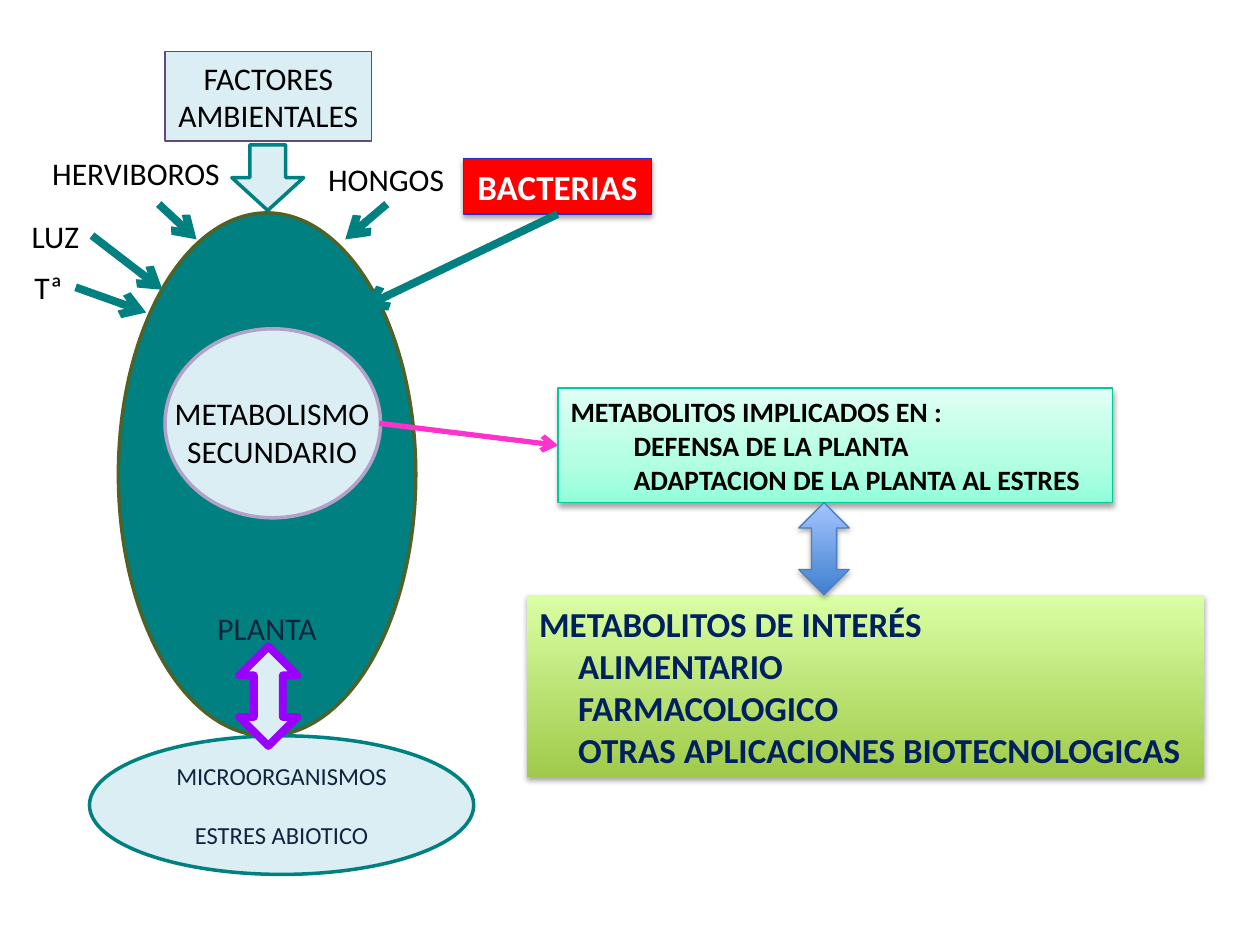
from dataclasses import dataclass

from lxml.etree import SubElement
from pptx import Presentation
from pptx.dml.color import RGBColor
from pptx.enum.shapes import MSO_CONNECTOR as Connector, MSO_SHAPE as Shape
from pptx.enum.text import MSO_ANCHOR as Anchor, MSO_AUTO_SIZE as AutoSize, PP_ALIGN as Align
from pptx.oxml.ns import qn
from pptx.util import Inches, Pt

COLUMNS, ROWS = 100, 75  # square grid cells


@dataclass(frozen=True)
class Theme:
    font: str = "Calibri"
    small: int = 14
    body: int = 16
    label: int = 18
    heading: int = 20
    black: str = "000000"
    white: str = "FFFFFF"
    ink: str = "0F243E"
    navy: str = "002060"
    teal: str = "008080"
    pale: str = "DBEEF4"
    olive: str = "4F6228"
    lilac: str = "B3A2C7"
    plum: str = "604A7B"
    violet: str = "9900FF"
    pink: str = "FF33CC"
    red: str = "FF0000"
    royal: str = "2E2ECB"
    mint_line: str = "00CC98"
    blue_line: str = "4B7EBC"
    mint: tuple = ((0, "90FFDA"), (35, "B2FFE3"), (100, "E0FFF4"))
    green: tuple = ((0, "A0CA4A"), (100, "DAFFA5"))
    blue: tuple = ((0, "3F80CE"), (100, "A4C4FF"))


def write(shape, lines, *, theme, size, color, bold=False, align=Align.CENTER,
          anchor=Anchor.MIDDLE, wrap=False, grow=True, gap=0, indent=0):
    """Write one paragraph per line; gap and indent apply after the first."""
    frame = shape.text_frame
    frame.word_wrap = wrap
    frame.auto_size = AutoSize.SHAPE_TO_FIT_TEXT if grow else AutoSize.NONE
    frame.vertical_anchor = anchor
    for index, line in enumerate(lines):
        paragraph = frame.add_paragraph() if index else frame.paragraphs[0]
        paragraph.alignment = align
        if index:
            paragraph.space_before = Pt(gap)
            properties = paragraph._p.get_or_add_pPr()
            properties.set("marL", str(Inches(indent)))
            properties.set("indent", "0")
        run = paragraph.add_run()
        run.text = line
        run.font.name = theme.font
        run.font.size = Pt(size)
        run.font.bold = bold
        run.font.color.rgb = RGBColor.from_string(color)
    return shape


def fill_gradient(shape, stops):
    """Fill from the bottom edge upwards with (percent, colour) stops."""
    shape.fill.gradient()
    shape.fill.gradient_angle = 90
    stop_list = shape._element.spPr.find(".//" + qn("a:gsLst"))
    for stop in list(stop_list):
        stop_list.remove(stop)
    for percent, color in stops:
        stop = SubElement(stop_list, qn("a:gs"), pos=str(percent * 1000))
        SubElement(stop, qn("a:srgbClr"), val=color)


def add_shadow(shape, opacity=35):
    effects = shape._element.spPr.find(qn("a:effectLst"))
    shadow = SubElement(effects, qn("a:outerShdw"), blurRad=str(Pt(3.1)),
                        dist=str(Pt(1.8)), dir="5400000", rotWithShape="0")
    color = SubElement(shadow, qn("a:srgbClr"), val="000000")
    SubElement(color, qn("a:alpha"), val=str(opacity * 1000))


class Diagram:
    def __init__(self, presentation, theme):
        self.theme = theme
        self.slide = presentation.slides.add_slide(presentation.slide_layouts[6])
        self.column = presentation.slide_width / COLUMNS
        self.row = presentation.slide_height / ROWS

    def place(self, *cells):
        """Turn alternating column and row counts into lengths."""
        return [round(cell * (self.row if index % 2 else self.column))
                for index, cell in enumerate(cells)]

    def shape(self, kind, at, fill, line=None, width=0.75, shadow=False):
        shape = self.slide.shapes.add_shape(kind, *self.place(*at))
        shape.shadow.inherit = False
        if isinstance(fill, tuple):
            fill_gradient(shape, fill)
        else:
            shape.fill.solid()
            shape.fill.fore_color.rgb = RGBColor.from_string(fill)
        if line:
            shape.line.color.rgb = RGBColor.from_string(line)
            shape.line.width = Pt(width)
        else:
            shape.line.fill.background()
        if shadow:
            add_shadow(shape)
        return shape

    def label(self, at, *lines):
        box = self.slide.shapes.add_textbox(*self.place(*at))
        return self.text(box, *lines, anchor=Anchor.TOP)

    def text(self, shape, *lines, **style):
        style = {"size": self.theme.label, "color": self.theme.black} | style
        return write(shape, lines, theme=self.theme, **style)

    def arrow(self, start, end, color, width, source=None, target=None):
        """Draw an arrow; source and target are (shape, side) joints."""
        line = self.slide.shapes.add_connector(Connector.STRAIGHT, *self.place(*start, *end))
        if source:
            line.begin_connect(*source)
        if target:
            line.end_connect(*target)
        line.line.color.rgb = RGBColor.from_string(color)
        line.line.width = Pt(width)
        SubElement(line.line._get_or_add_ln(), qn("a:tailEnd"), type="arrow")
        SubElement(line._element.spPr, qn("a:effectLst"))


def main():
    presentation = Presentation()
    presentation.slide_width, presentation.slide_height = Inches(10), Inches(7.5)
    theme = Theme()
    diagram = Diagram(presentation, theme)

    plant = diagram.shape(Shape.OVAL, (9.4, 16.9, 23.6, 41.5), theme.teal, theme.olive, 2)
    plant.text_frame.margin_bottom = Inches(0.1)
    diagram.text(plant, "PLANTA", color=theme.ink, anchor=Anchor.BOTTOM, grow=False)
    diagram.shape(Shape.OVAL, (13.1, 26.1, 17.1, 15), theme.pale, theme.lilac, 2)
    diagram.label((12.8, 30.8, 17.6, 7.1), "METABOLISMO", "SECUNDARIO")
    soil = diagram.shape(Shape.OVAL, (7.1, 58.4, 30.5, 11), theme.pale, theme.teal, 2)
    diagram.text(soil, "MICROORGANISMOS", "ESTRES ABIOTICO", size=theme.small,
                 color=theme.ink, gap=17, grow=False)
    diagram.shape(Shape.UP_DOWN_ARROW, (19, 51.3, 4.6, 7.9), theme.pale, theme.violet, 4.5)

    factors = diagram.shape(Shape.RECTANGLE, (13.1, 4.1, 16.4, 7.1), theme.pale, theme.plum)
    diagram.text(factors, "FACTORES", "AMBIENTALES")
    diagram.shape(Shape.DOWN_ARROW, (18.4, 11.5, 5.7, 5.2), theme.pale, theme.teal, 2)
    for name, at, start, end in (
        ("HERVIBOROS", (3.1, 11.7, 15.4, 4), (12.6, 16.2), (15.6, 19)),
        ("HONGOS", (25, 12.2, 11.3, 4), (30.7, 16.2), (27.4, 19)),
        ("LUZ", (1.5, 16.7, 5.8, 4), (7.3, 18.7), (12.9, 23)),
        ("Tª", (1.7, 20.8, 4.3, 4), (6, 22.8), (11.6, 24.8)),
    ):
        diagram.label(at, name)
        diagram.arrow(start, end, theme.teal, 4.5)

    bacteria = diagram.shape(Shape.RECTANGLE, (36.8, 12.6, 14.9, 4.4), theme.red,
                             theme.royal, shadow=True)
    diagram.text(bacteria, "BACTERIAS", size=theme.heading, color=theme.white, bold=True)
    diagram.arrow((44.3, 16.9), (28.8, 24.4), theme.teal, 4.5, source=(bacteria, 2))

    defense = diagram.shape(Shape.RECTANGLE, (44.3, 30.8, 44, 9.1), theme.mint,
                            theme.mint_line, shadow=True)
    diagram.text(defense, "METABOLITOS IMPLICADOS EN :", "DEFENSA DE LA PLANTA",
                 "ADAPTACION DE LA PLANTA AL ESTRES", size=theme.body, bold=True,
                 align=Align.LEFT, wrap=True, indent=0.5)
    diagram.arrow((30.1, 33.6), (44.3, 35.3), theme.pink, 3, target=(defense, 1))

    interest = diagram.shape(Shape.RECTANGLE, (41.8, 47.2, 53.8, 14.5), theme.green, shadow=True)
    diagram.text(interest, "METABOLITOS DE INTERÉS", "ALIMENTARIO", "FARMACOLOGICO",
                 "OTRAS APLICACIONES BIOTECNOLOGICAS", size=theme.heading, color=theme.navy,
                 bold=True, align=Align.LEFT, wrap=True, indent=0.31)
    diagram.shape(Shape.UP_DOWN_ARROW, (63.4, 39.9, 4, 7.3), theme.blue,
                  theme.blue_line, shadow=True)

    presentation.save("out.pptx")


if __name__ == "__main__":
    main()
